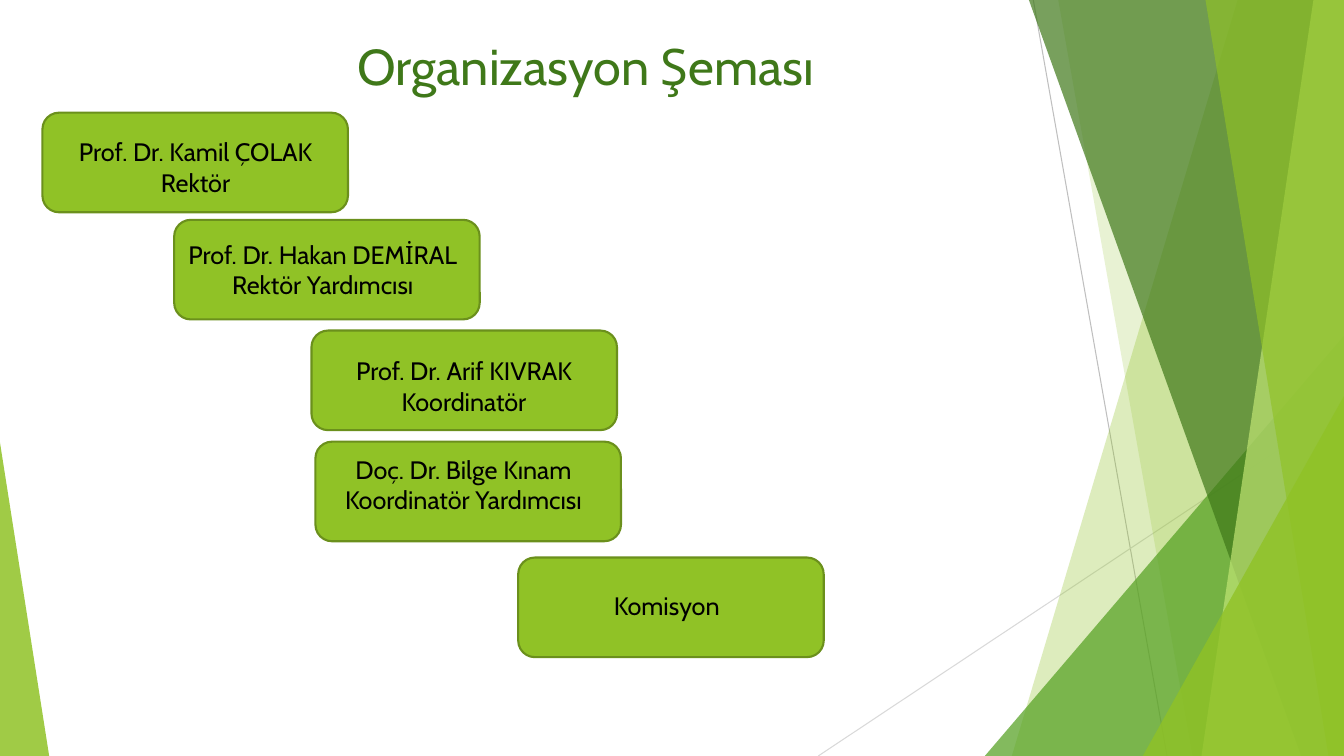
from lxml import etree
from pptx import Presentation
from pptx.dml.color import RGBColor
from pptx.enum.shapes import MSO_CONNECTOR, MSO_SHAPE
from pptx.enum.text import MSO_ANCHOR, PP_ALIGN
from pptx.oxml.ns import qn
from pptx.util import Cm, Pt

STRAIGHT = MSO_CONNECTOR.STRAIGHT
TRIANGLE, ROUNDED = MSO_SHAPE.ISOSCELES_TRIANGLE, MSO_SHAPE.ROUNDED_RECTANGLE
TOP = MSO_ANCHOR.TOP
LEFT, CENTER = PP_ALIGN.LEFT, PP_ALIGN.CENTER

SLIDE_W, SLIDE_H = 33.87, 19.05
FONT = "Cabin"
LIME, GREEN, DARK_GREEN, PALE_LIME = "90C226", "54A021", "3F7819", "C0E474"
CARD_W, CARD_H = 7.7, 2.51

# Card left and top, label offset and size inside the card, label paragraphs
POSTS = [
    ((1.07, 2.84), (0.43, 0.48, 6.86, 1.8), ["Prof. Dr. Kamil ÇOLAK Rektör"]),
    ((4.39, 5.54), (0, 0.36, 7.49, 1.8), ["Prof. Dr. Hakan DEMİRAL", "Rektör Yardımcısı"]),
    ((7.85, 8.33), (0.1, 0.51, 7.49, 1.8), ["Prof. Dr. Arif KIVRAK", "Koordinatör"]),
    ((7.95, 11.13), (0.25, 0.2, 6.96, 2.57), ["Doç. Dr. Bilge Kınam", "Koordinatör Yardımcısı"]),
    ((13.06, 14.05), (0, 0.71, 7.49, 1.02), ["Komisyon"]),
]


def color(hex_code):
    return RGBColor.from_string(hex_code)


def paint(shape, fill, opacity=100, outline=None):
    shape.shadow.inherit = False
    shape.fill.solid()
    shape.fill.fore_color.rgb = color(fill)
    if opacity < 100:
        tint = shape.fill._xPr.find(qn("a:solidFill"))[0]
        etree.SubElement(tint, qn("a:alpha")).set("val", str(opacity * 1000))
    if outline:
        shape.line.color.rgb = color(outline)
        shape.line.width = Pt(1.5)
    else:
        shape.line.fill.background()


def add_text(slide, box, paragraphs, size=18, ink="000000", align=CENTER):
    frame = slide.shapes.add_textbox(*map(Cm, box)).text_frame
    frame.word_wrap = True
    frame.vertical_anchor = TOP
    for index, words in enumerate(paragraphs):
        paragraph = frame.add_paragraph() if index else frame.paragraphs[0]
        paragraph.alignment = align
        run = paragraph.add_run()
        run.text = words
        run.font.name = FONT
        run.font.size = Pt(size)
        run.font.color.rgb = color(ink)


def add_ray(slide, start, end, ink):
    ray = slide.shapes.add_connector(STRAIGHT, *map(Cm, start + end))
    ray.line.color.rgb = color(ink)
    ray.line.width = Pt(0.75)
    etree.SubElement(ray._element.spPr, qn("a:effectLst"))


def add_facet(slide, box, top_x, bottom_x, fill, opacity):
    """Full-height band from a slanted left edge to the right edge of the box."""
    left, top, width, height = box
    right, bottom = left + width, top + height
    outline = slide.shapes.build_freeform(Cm(left + top_x), Cm(top))
    corners = [(right, top), (right, bottom), (left + bottom_x, bottom)]
    outline.add_line_segments([(Cm(x), Cm(y)) for x, y in corners], close=True)
    paint(outline.convert_to_shape(), fill, opacity)


def add_corner(slide, box, width, height, apex, fill, opacity):
    """Triangle in a bottom corner of the box; apex 0 is left, 1 is right."""
    left = box[0] + apex * (box[2] - width)
    top = box[1] + box[3] - height
    corner = slide.shapes.add_shape(TRIANGLE, *map(Cm, (left, top, width, height)))
    corner.adjustments[0] = apex
    paint(corner, fill, opacity)


def add_backdrop(slide, box):
    left, top, width, height = box
    right, bottom = left + width, top + height
    # Thin rays
    add_ray(slide, (left + 26.04, top), (left + 29.41, bottom), "BFBFBF")
    add_ray(slide, (right, top + 10.24), (left + 20.62, bottom), "D9D9D9")
    # Translucent facets, from back to front
    add_facet(slide, box, 31.19, 25.5, LIME, 30)
    add_facet(slide, box, 26.67, 30.05, LIME, 20)
    add_corner(slide, box, 9.05, 10.59, 1, GREEN, 72)
    add_facet(slide, box, 25.93, 32.79, DARK_GREEN, 70)
    add_facet(slide, box, 33.1, 30.28, PALE_LIME, 70)
    add_facet(slide, box, 30.38, 33.48, LIME, 65)
    add_corner(slide, box, 5.07, 9.07, 1, LIME, 80)
    add_corner(slide, box, 1.24, 7.9, 0, LIME, 85)


def add_post(slide, box, label_box, paragraphs):
    left, top = box[:2]
    card = slide.shapes.add_shape(ROUNDED, *map(Cm, box))
    paint(card, LIME, outline="6B901C")
    dx, dy, width, height = label_box
    add_text(slide, (left + dx, top + dy, width, height), paragraphs)


def add_organization(slide, box):
    for (x, y), label_box, paragraphs in POSTS:
        add_post(slide, (box[0] + x, box[1] + y, CARD_W, CARD_H), label_box, paragraphs)


def main():
    deck = Presentation()
    deck.slide_width, deck.slide_height = Cm(SLIDE_W), Cm(SLIDE_H)
    slide = deck.slides.add_slide(deck.slide_layouts[6])
    page = (0, 0, SLIDE_W, SLIDE_H)
    add_backdrop(slide, page)
    add_text(slide, (8.76, 0.76, 13.79, 3.66), ["Organizasyon Şeması"],
             size=36, ink=DARK_GREEN, align=LEFT)
    add_organization(slide, page)
    deck.save("out.pptx")


if __name__ == "__main__":
    main()
